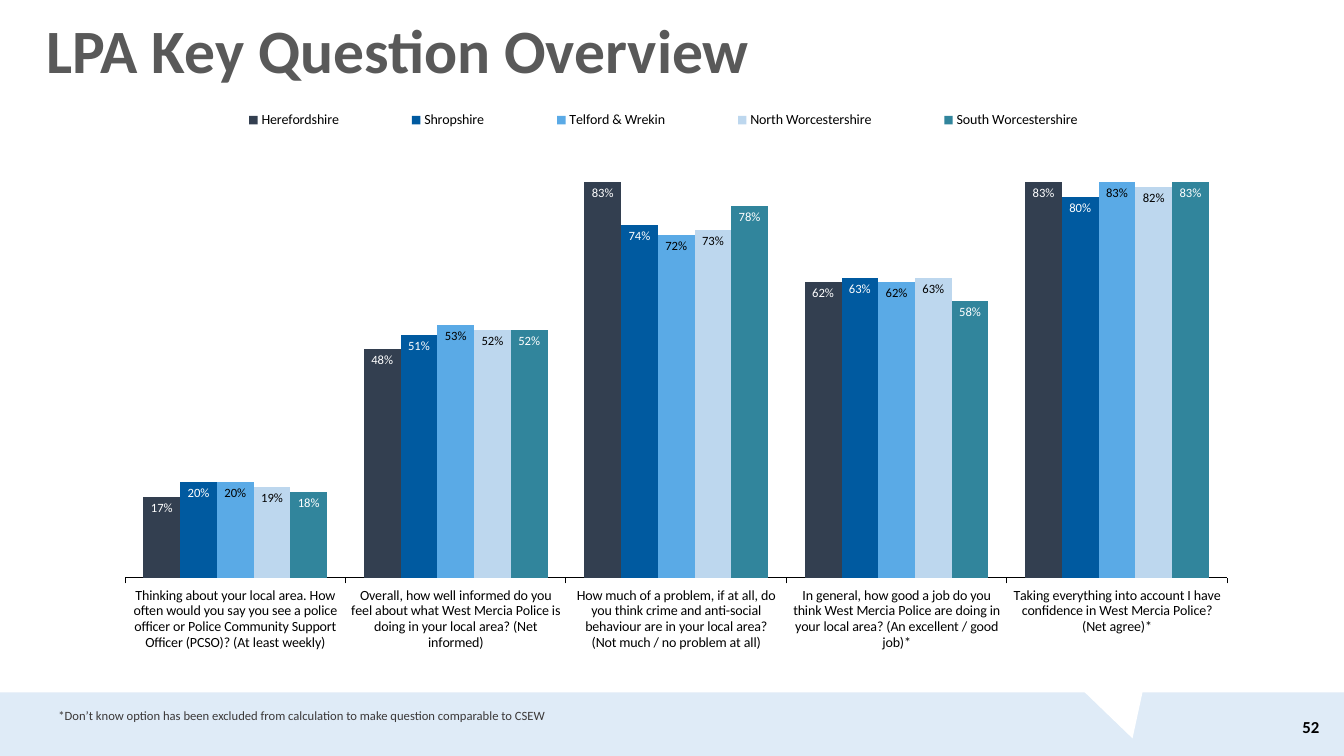
"""Builds the LPA key question overview slide."""
from lxml import etree
from pptx import Presentation
from pptx import util as u
from pptx.chart.data import CategoryChartData
from pptx.dml.color import RGBColor
from pptx.enum import chart as ch, shapes, text
from pptx.oxml import parse_xml
from pptx.oxml.ns import nsdecls

FONT = "Calibri"
QUESTIONS = [
    "Thinking about your local area. How often would you say you see a police officer "
    "or Police Community Support Officer (PCSO)? (At least weekly)",
    "Overall, how well informed do you feel about what West Mercia Police is doing "
    "in your local area? (Net informed)",
    "How much of a problem, if at all, do you think crime and anti-social behaviour "
    "are in your local area? (Not much / no problem at all)",
    "In general, how good a job do you think West Mercia Police are doing "
    "in your local area? (An excellent / good job)*",
    "Taking everything into account I have confidence in West Mercia Police? (Net agree)*",
]
AREAS = [
    ("Herefordshire", (0.17, 0.48, 0.83, 0.62, 0.83), "333F50", "FFFFFF"),
    ("Shropshire", (0.2, 0.51, 0.74, 0.63, 0.8), "005AA0", "FFFFFF"),
    ("Telford & Wrekin", (0.2, 0.53, 0.72, 0.62, 0.83), "5AAAE6", "000000"),
    ("North Worcestershire", (0.19, 0.52, 0.73, 0.63, 0.82), "BDD7EE", "000000"),
    ("South Worcestershire", (0.18, 0.52, 0.78, 0.58, 0.83), "31859C", "FFFFFF"),
]
FOOTER = [
    (shapes.MSO_SHAPE.RECTANGLE, (0, 494.6, 960, 45.4), 0, "DFEBF7"),
    (shapes.MSO_SHAPE.ISOSCELES_TRIANGLE, (774, 478.8, 55.4, 49.7), 163.1, "FFFFFF"),
]
MID, TOP = text.MSO_ANCHOR.MIDDLE, text.MSO_ANCHOR.TOP
LEFT, RIGHT = text.PP_ALIGN.LEFT, text.PP_ALIGN.RIGHT
TEXTS = [
    ("52", (908.6, 504.7, 41, 28.8), 12, "000000", True, MID, RIGHT, 1.0),
    ("LPA Key Question Overview", (25.9, 12.2, 923.8, 54.7), 44, "595959", True, MID, LEFT, 0.8),
    ("*Don’t know option has been excluded from calculation to make question comparable to CSEW",
     (34.6, 501.8, 445.7, 28.8), 9, "3B3838", False, TOP, LEFT, 1.0),
]
CHART_BOX = (81.4, 61.9, 795.6, 419)
PLOT_LAYOUT = (0.01, 0.025, 0.99, 0.812)
LEGEND_LAYOUT = (0.06, 0.027, 0.867, 0.06)


def rgb(value):
    return RGBColor.from_string(value)


def pts(box):
    return [u.Pt(v) for v in box]


def style(font, size, color, bold=False):
    font.name, font.size, font.bold = FONT, u.Pt(size), bold
    font.color.rgb = rgb(color)


def layout(box, inner=False):
    target = '<c:layoutTarget val="inner"/>' if inner else ""
    modes = "".join(f'<c:{k}Mode val="edge"/>' for k in "xy")
    sizes = "".join(f'<c:{k} val="{v}"/>' for k, v in zip("xywh", box))
    return parse_xml(f'<c:layout {nsdecls("c")}><c:manualLayout>{target}{modes}{sizes}'
                     '</c:manualLayout></c:layout>')


def set_layout(parent, before, box, inner=False):
    for old in parent.xpath("c:layout"):
        parent.remove(old)
    parent.xpath(before)[0].addprevious(layout(box, inner))


def add_chart(s):
    data = CategoryChartData(number_format="0%")
    data.categories = QUESTIONS
    for name, values, *_ in AREAS:
        data.add_series(name, values)
    chart = s.shapes.add_chart(ch.XL_CHART_TYPE.COLUMN_CLUSTERED, *pts(CHART_BOX), data).chart
    style(chart.font, 10, "000000")
    chart.has_title = False
    plot = chart.plots[0]
    plot.gap_width, plot.overlap, plot.vary_by_categories = 100, 0, False
    for series, (_, _, fill, label) in zip(plot.series, AREAS):
        series.format.fill.solid()
        series.format.fill.fore_color.rgb = rgb(fill)
        labels = series.data_labels
        labels.show_value = True
        labels.position = ch.XL_LABEL_POSITION.INSIDE_END
        labels.number_format, labels.number_format_is_linked = "0%", False
        style(labels.font, 9, label)

    axis = chart.category_axis
    axis.major_tick_mark = ch.XL_TICK_MARK.OUTSIDE
    axis.format.line.color.rgb = rgb("000000")
    axis.format.line.width = u.Pt(0.75)
    axis = chart.value_axis
    axis.minimum_scale, axis.maximum_scale = 0, 1
    axis.has_major_gridlines = axis.visible = False

    chart.has_legend = True
    legend = chart.legend
    legend.position = ch.XL_LEGEND_POSITION.RIGHT
    legend.include_in_layout = False
    style(legend.font, 10, "000000")
    area = chart.element.xpath(".//c:plotArea")[0]
    set_layout(area, "c:barChart", PLOT_LAYOUT, True)
    set_layout(area.getnext(), "c:overlay", LEGEND_LAYOUT)


def main():
    prs = Presentation()
    prs.slide_width, prs.slide_height = u.Pt(960), u.Pt(540)
    s = prs.slides.add_slide(prs.slide_layouts[6])
    for kind, box, angle, fill in FOOTER:
        sp = s.shapes.add_shape(kind, *pts(box))
        sp.rotation = angle
        sp.shadow.inherit = False
        sp.fill.solid()
        sp.fill.fore_color.rgb = rgb(fill)
        sp.line.fill.background()
    for words, box, size, color, bold, anchor, align, spacing in TEXTS:
        tf = s.shapes.add_textbox(*pts(box)).text_frame
        tf.word_wrap, tf.vertical_anchor = True, anchor
        tf.text = words
        p = tf.paragraphs[0]
        p.alignment, p.line_spacing = align, spacing
        style(p.runs[0].font, size, color, bold)
    add_chart(s)
    prs.save("out.pptx")


if __name__ == "__main__":
    main()
